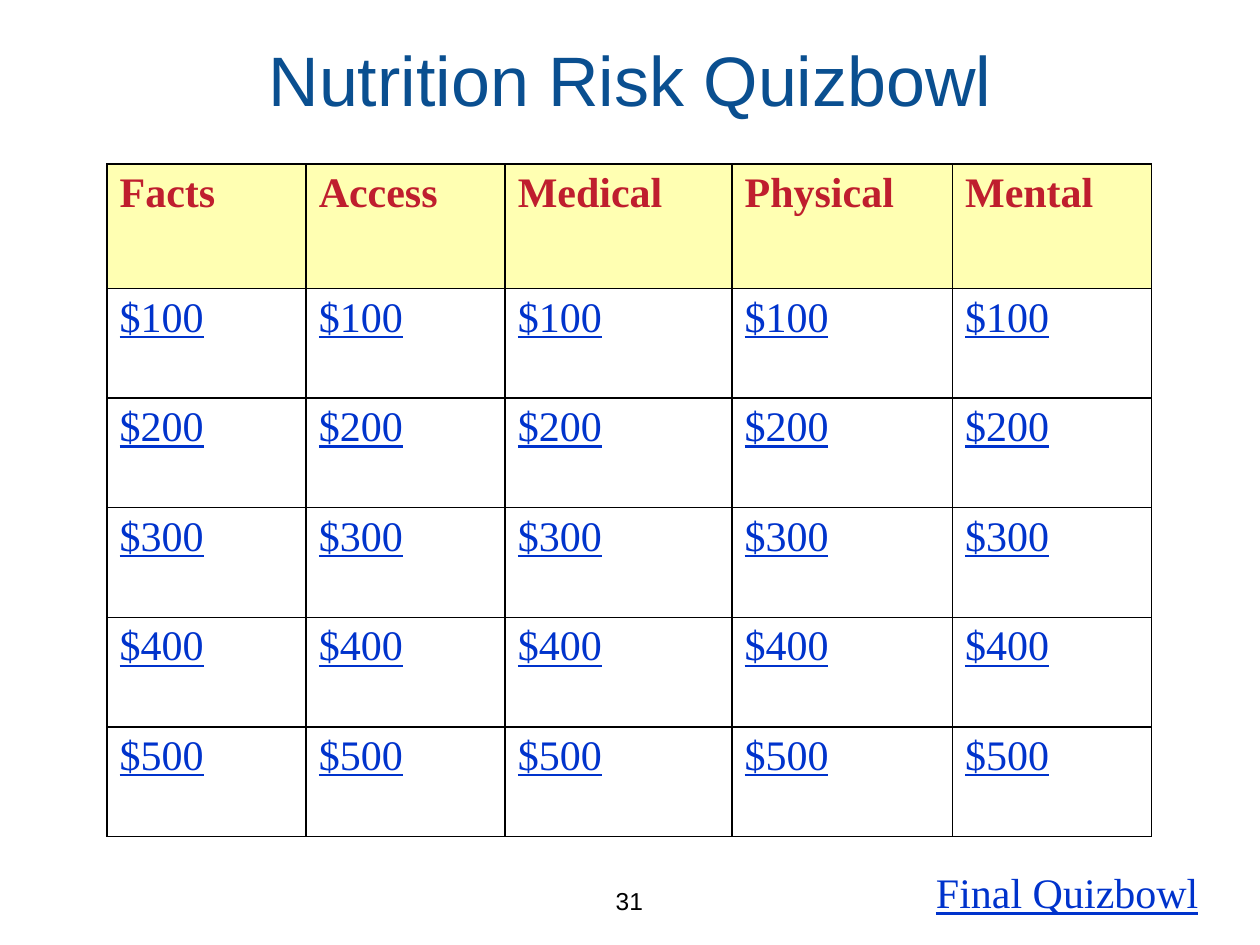
"""Build the nutrition risk quiz board slide."""
import pptx
import pptx.dml.color
import pptx.enum.text
import pptx.oxml
import pptx.oxml.ns
import pptx.util

Inches = pptx.util.Inches
ALIGN = pptx.enum.text.PP_ALIGN
ANCHOR = pptx.enum.text.MSO_ANCHOR

COLORS = {"title": "0A4F90", "heading": "BF1E2E", "link": "0033CC",
          "band": "FFFFB2", "text": "000000"}
SANS, SERIF = "Arial", "Times New Roman"
CATEGORIES = ["Facts", "Access", "Medical", "Physical", "Mental"]
AMOUNTS = range(100, 600, 100)


class Board:
    def __init__(self, prs):
        self.slide = prs.slides.add_slide(prs.slide_layouts[5])

    def color(self, name):
        return pptx.dml.color.RGBColor.from_string(COLORS[name])

    def add_text(self, tf, text, size, font, color, align=ALIGN.LEFT,
                 bold=False, underline=False):
        p = tf.paragraphs[0]
        p.alignment = align
        r = p.add_run()
        r.text = text
        r.font.size = pptx.util.Pt(size)
        r.font.name = font
        r.font.bold = bold
        r.font.underline = underline
        r.font.color.rgb = self.color(color)

    def title(self, text, left, top, width, height):
        sp = self.slide.shapes.title
        sp.left, sp.top = Inches(left), Inches(top)
        sp.width, sp.height = Inches(width), Inches(height)
        sp.text_frame.vertical_anchor = ANCHOR.MIDDLE
        self.add_text(sp.text_frame, text, 40, SANS, "title", ALIGN.CENTER)

    def textbox(self, text, left, top, width, height, size, font, color,
                anchor=ANCHOR.TOP, wrap=True, **style):
        sp = self.slide.shapes.add_textbox(
            Inches(left), Inches(top), Inches(width), Inches(height))
        tf = sp.text_frame
        tf.word_wrap = wrap
        tf.vertical_anchor = anchor
        self.add_text(tf, text, size, font, color, **style)

    def border(self, cell):
        tc_pr = cell._tc.get_or_add_tcPr()
        for i, side in enumerate(("lnL", "lnR", "lnT", "lnB")):
            tc_pr.insert(i, pptx.oxml.parse_xml(
                f'<a:{side} {pptx.oxml.ns.nsdecls("a")} w="12700"><a:solidFill>'
                f'<a:srgbClr val="{COLORS["text"]}"/></a:solidFill></a:{side}>'))

    def table(self, rows, left, top, widths, heights):
        table = self.slide.shapes.add_table(
            len(rows), len(widths), Inches(left), Inches(top),
            Inches(sum(widths)), Inches(sum(heights))).table
        table.horz_banding = False
        for column, width in zip(table.columns, widths):
            column.width = Inches(width)
        for i, (row, height) in enumerate(zip(rows, heights)):
            table.rows[i].height = Inches(height)
            header = i == 0
            for j, text in enumerate(row):
                cell = table.cell(i, j)
                if header:
                    cell.fill.solid()
                    cell.fill.fore_color.rgb = self.color("band")
                else:
                    cell.fill.background()
                self.border(cell)
                self.add_text(cell.text_frame, text, 24, SERIF,
                              "heading" if header else "link",
                              bold=header, underline=not header)


def main():
    prs = pptx.Presentation()
    prs.slide_width, prs.slide_height = Inches(10), Inches(7.5)
    board = Board(prs)
    board.textbox("31", 3.83, 6.95, 2.33, 0.4, 14, SANS, "text",
                  anchor=ANCHOR.MIDDLE, align=ALIGN.CENTER)
    board.title("Nutrition Risk Quizbowl", 0.5, 0.17, 9, 0.91)
    rows = [CATEGORIES] + [[f"${amount}"] * len(CATEGORIES) for amount in AMOUNTS]
    board.table(rows, 0.85, 1.3, [1.58, 1.58, 1.8, 1.75, 1.58],
                [0.99] + [0.87] * len(AMOUNTS))
    board.textbox("Final Quizbowl", 7.33, 6.83, 2.28, 0.5, 24, SERIF, "link",
                  wrap=False, underline=True)
    prs.save("out.pptx")


if __name__ == "__main__":
    main()
